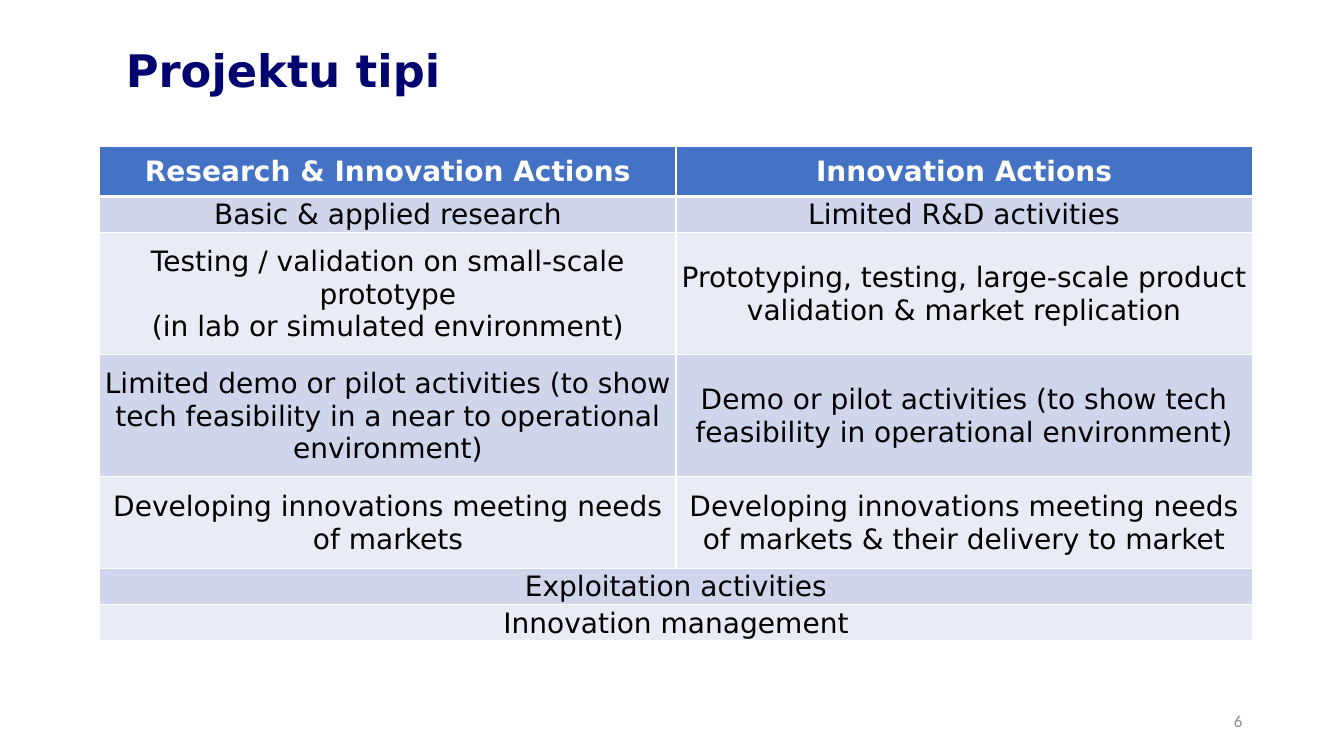
import dataclasses

import lxml.etree
import pptx
import pptx.dml.color
import pptx.enum.text
import pptx.oxml.ns
import pptx.util

Inches = pptx.util.Inches
Align = pptx.enum.text.PP_ALIGN
Anchor = pptx.enum.text.MSO_ANCHOR


@dataclasses.dataclass(frozen=True)
class Theme:
    navy: str = "01046E"
    gray: str = "8C8C8C"
    head: str = "4472C4"
    bands: tuple[str, str] = ("CFD5EA", "E9EBF5")
    white: str = "FFFFFF"
    black: str = "000000"
    sans: str = "DejaVu Sans"
    foot: str = "Calibri"
    title_size: int = 32
    cell_size: int = 20
    foot_size: int = 12
    thin: int = 1
    thick: int = 3


@dataclasses.dataclass(frozen=True)
class Style:
    font: str
    size: int
    color: str
    bold: bool = False
    align: Align = Align.LEFT


@dataclasses.dataclass(frozen=True)
class Label:
    text: str
    box: tuple[float, float, float, float]
    style: Style
    spacing: float = 1.0


@dataclasses.dataclass(frozen=True)
class Row:
    """A table row; a single text spans both columns."""
    height: float
    texts: tuple[str, ...]


THEME = Theme()
HEAD = Style(THEME.sans, THEME.cell_size, THEME.white, True, Align.CENTER)
BODY = Style(THEME.sans, THEME.cell_size, THEME.black, False, Align.CENTER)

LABELS = [
    Label("Projektu tipi", (1.15, 0, 11.5, 1.45),
          Style(THEME.sans, THEME.title_size, THEME.navy, True), 0.9),
    Label("6", (9.42, 6.95, 3, 0.4),
          Style(THEME.foot, THEME.foot_size, THEME.gray, align=Align.RIGHT)),
]

ROWS = [
    Row(0.5, ("Research & Innovation Actions", "Innovation Actions")),
    Row(0.36, ("Basic & applied research", "Limited R&D activities")),
    Row(1.21, ("Testing / validation on small-scale prototype\n"
               "(in lab or simulated environment)",
               "Prototyping, testing, large-scale product validation"
               " & market replication")),
    Row(1.21, ("Limited demo or pilot activities (to show tech feasibility"
               " in a near to operational environment)",
               "Demo or pilot activities (to show tech feasibility"
               " in operational environment)")),
    Row(0.91, ("Developing innovations meeting needs of markets",
               "Developing innovations meeting needs of markets"
               " & their delivery to market")),
    Row(0.36, ("Exploitation activities",)),
    Row(0.36, ("Innovation management",)),
]


def rgb(color: str) -> pptx.dml.color.RGBColor:
    return pptx.dml.color.RGBColor.from_string(color)


def write(frame, text: str, style: Style, spacing: float = 1.0) -> None:
    """Write each line of the text as a paragraph of its own."""
    for i, line in enumerate(text.split("\n")):
        para = frame.add_paragraph() if i else frame.paragraphs[0]
        para.alignment = style.align
        para.line_spacing = spacing
        run = para.add_run()
        run.text = line
        run.font.name = style.font
        run.font.size = pptx.util.Pt(style.size)
        run.font.bold = style.bold
        run.font.color.rgb = rgb(style.color)


def add_label(slide, label: Label) -> None:
    frame = slide.shapes.add_textbox(*map(Inches, label.box)).text_frame
    frame.word_wrap = True
    frame.vertical_anchor = Anchor.MIDDLE
    write(frame, label.text, label.style, label.spacing)


def set_edges(cell, top: int, base: int) -> None:
    """Draw the four cell borders, which must come before the fill."""
    props = cell._tc.get_or_add_tcPr()
    edges = {"L": THEME.thin, "R": THEME.thin, "T": top, "B": base}
    for i, (side, width) in enumerate(edges.items()):
        line = lxml.etree.Element(pptx.oxml.ns.qn(f"a:ln{side}"),
                                  w=str(pptx.util.Pt(width)))
        fill = lxml.etree.SubElement(line, pptx.oxml.ns.qn("a:solidFill"))
        lxml.etree.SubElement(fill, pptx.oxml.ns.qn("a:srgbClr"),
                              val=THEME.white)
        props.insert(i, line)


def paint(cell, index: int) -> None:
    """Set the fill, margins and borders that go with the row index."""
    cell.fill.solid()
    cell.fill.fore_color.rgb = rgb(
        THEME.bands[(index - 1) % 2] if index else THEME.head)
    cell.vertical_anchor = Anchor.MIDDLE
    cell.margin_left = cell.margin_right = cell.margin_top = Inches(0.01)
    cell.margin_bottom = 0
    set_edges(cell, THEME.thick if index == 1 else THEME.thin,
              THEME.thick if index == 0 else THEME.thin)


def add_grid(slide, rows: list[Row]) -> None:
    height = sum(row.height for row in rows)
    table = slide.shapes.add_table(
        len(rows), 2, Inches(0.99), Inches(1.45),
        Inches(11.43), Inches(height)).table
    for i, row in enumerate(rows):
        table.rows[i].height = Inches(row.height)
        cells = list(table.rows[i].cells)
        if len(row.texts) == 1:
            cells[0].merge(cells[1])
        for cell in cells:
            paint(cell, i)
        for cell, text in zip(cells, row.texts):
            write(cell.text_frame, text, BODY if i else HEAD)


def main() -> None:
    deck = pptx.Presentation()
    deck.slide_width = Inches(13.33)
    deck.slide_height = Inches(7.5)
    slide = deck.slides.add_slide(deck.slide_layouts[6])
    for label in LABELS:
        add_label(slide, label)
    add_grid(slide, ROWS)
    deck.save("out.pptx")


if __name__ == "__main__":
    main()
